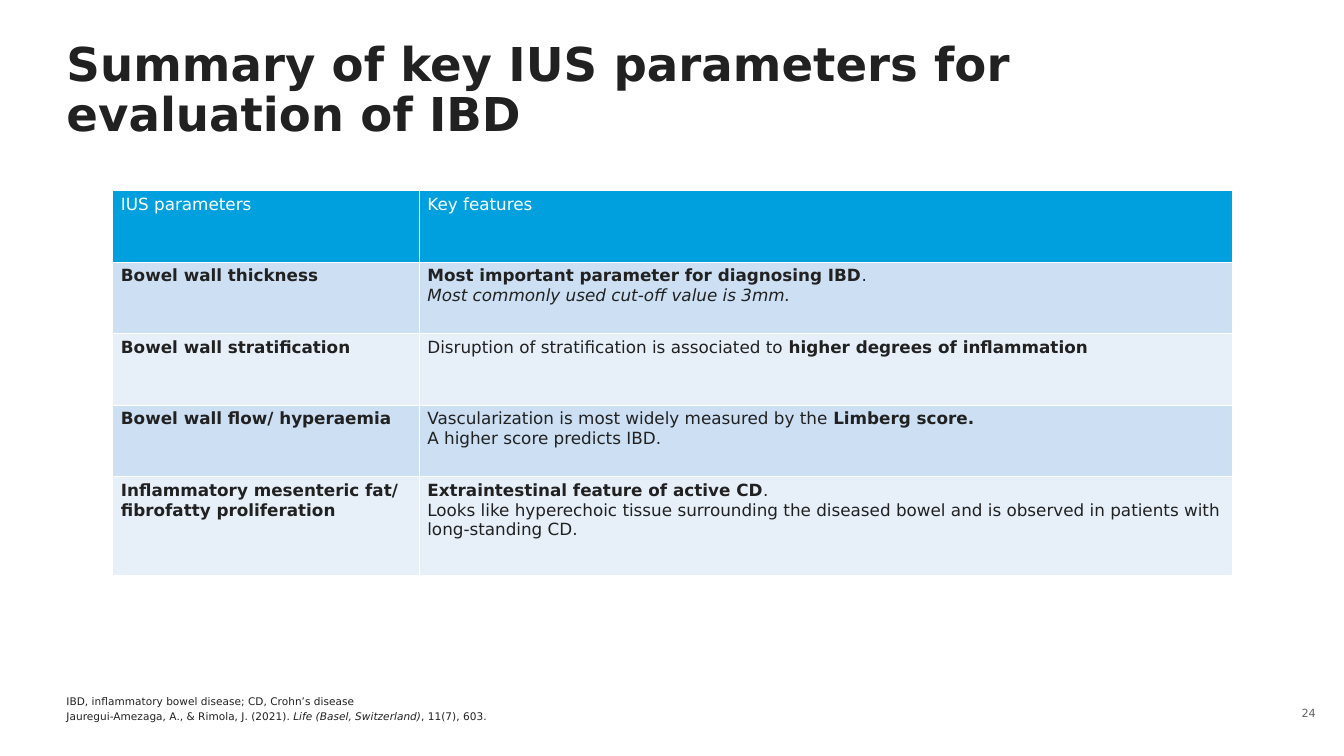
import dataclasses

import lxml.etree
import pptx
import pptx.dml.color
import pptx.enum.text
import pptx.oxml.ns
import pptx.util

ANCHOR = pptx.enum.text.MSO_ANCHOR
ALIGN = pptx.enum.text.PP_ALIGN


@dataclasses.dataclass(frozen=True)
class Theme:
    font: str = "DejaVu Sans"
    ink: str = "212121"
    grey: str = "646464"
    white: str = "FFFFFF"
    header: str = "00A0DF"
    bands: tuple = ("CCDFF3", "E7F0F9")
    title_size: float = 33.3
    table_size: float = 12
    number_size: float = 8
    note_size: float = 7.5


class SlideBuilder:
    """Places elements; all lengths are percentages of the slide's size."""

    def __init__(self, deck, theme):
        self.deck = deck
        self.theme = theme
        self.page = deck.slides.add_slide(deck.slide_layouts[6])

    def across(self, share):
        return round(self.deck.slide_width * share / 100)

    def down(self, share):
        return round(self.deck.slide_height * share / 100)

    def area(self, left, top, width, height):
        return self.across(left), self.down(top), self.across(width), self.down(height)

    def set_paras(self, frame, paras, size, color, bold=False, align=ALIGN.LEFT,
                  line=None, gap=0):
        """Each para is a list of spans; a span is text or (text, style)."""
        frame.word_wrap = True
        for index, spans in enumerate(paras):
            para = frame.add_paragraph() if index else frame.paragraphs[0]
            para.alignment = align
            if line:
                para.line_spacing = line
            if index and gap:
                para.space_before = pptx.util.Pt(gap)
            para.font.name = self.theme.font
            para.font.size = pptx.util.Pt(size)
            para.font.color.rgb = pptx.dml.color.RGBColor.from_string(color)
            para.font.bold = bold
            for part in spans:
                text, style = (part, "") if isinstance(part, str) else part
                span = para.add_run()
                span.text = text
                if style:
                    setattr(span.font, style, True)

    def text(self, area, paras, size, color, anchor=ANCHOR.TOP, **style):
        frame = self.page.shapes.add_textbox(*self.area(*area)).text_frame
        frame.margin_left = frame.margin_right = 0
        frame.margin_top = frame.margin_bottom = 0
        frame.vertical_anchor = anchor
        self.set_paras(frame, paras, size, color, **style)

    def border(self, cell, width=1):
        properties = cell._tc.get_or_add_tcPr()
        for side in ("lnL", "lnR", "lnT", "lnB"):
            edge = lxml.etree.SubElement(
                properties, pptx.oxml.ns.qn(f"a:{side}"), w=str(pptx.util.Pt(width)))
            fill = lxml.etree.SubElement(edge, pptx.oxml.ns.qn("a:solidFill"))
            lxml.etree.SubElement(fill, pptx.oxml.ns.qn("a:srgbClr"), val=self.theme.white)

    def table(self, left, top, widths, heights, rows):
        area = self.area(left, top, sum(widths), sum(heights))
        table = self.page.shapes.add_table(len(rows), len(widths), *area).table
        table.first_row = table.horz_banding = False
        for column, width in zip(table.columns, widths):
            column.width = self.across(width)
        for row, height in zip(table.rows, heights):
            row.height = self.down(height)
        for r, row in enumerate(rows):
            fill = self.theme.bands[(r - 1) % 2] if r else self.theme.header
            color = self.theme.ink if r else self.theme.white
            for c, paras in enumerate(row):
                cell = table.cell(r, c)
                cell.margin_left = cell.margin_right = pptx.util.Inches(0.08)
                cell.margin_top = cell.margin_bottom = pptx.util.Inches(0.04)
                self.border(cell)
                cell.fill.solid()
                cell.fill.fore_color.rgb = pptx.dml.color.RGBColor.from_string(fill)
                self.set_paras(cell.text_frame, paras, self.theme.table_size, color,
                               bold=r > 0 and c == 0)


PARAMETERS = [
    ([["IUS parameters"]], [["Key features"]]),
    ([["Bowel wall thickness"]],
     [[("Most important parameter for diagnosing IBD", "bold"), "."],
      [("Most commonly used cut-off value is 3mm.", "italic")]]),
    ([["Bowel wall stratification"]],
     [["Disruption of stratification is associated to ",
       ("higher degrees of inflammation", "bold")]]),
    ([["Bowel wall flow/ hyperaemia"]],
     [["Vascularization is most widely measured by the ", ("Limberg score.", "bold")],
      ["A higher score predicts IBD."]]),
    ([["Inflammatory mesenteric fat/ fibrofatty proliferation"]],
     [[("Extraintestinal feature of active CD", "bold"), "."],
      ["Looks like hyperechoic tissue surrounding the diseased bowel and is "
       "observed in patients with long-standing CD."]]),
]

NOTES = [
    ["IBD, inflammatory bowel disease; CD, Crohn’s disease"],
    ["Jauregui-Amezaga, A., & Rimola, J. (2021). ",
     ("Life (Basel, Switzerland)", "italic"), ", 11(7), 603."],
]


def main():
    deck = pptx.Presentation()
    deck.slide_width = pptx.util.Inches(13.33)
    deck.slide_height = pptx.util.Inches(7.5)
    theme = Theme()
    slide = SlideBuilder(deck, theme)

    # Title
    slide.text((4.95, 5.47, 83.27, 13.47),
               [["Summary of key IUS parameters for evaluation of IBD"]],
               theme.title_size, theme.ink, bold=True, line=0.9)

    # Parameter table
    slide.table(8.4, 25.2, (22.8, 60.5), [9.47] * 4 + [13.07], PARAMETERS)

    # Footnotes and page number
    slide.text((4.95, 91.6, 68.8, 4), NOTES, theme.note_size, theme.ink,
               anchor=ANCHOR.BOTTOM, gap=1.7)
    slide.text((95.5, 91.87, 2.4, 4.8), [["24"]], theme.number_size, theme.grey,
               anchor=ANCHOR.MIDDLE, align=ALIGN.RIGHT)

    deck.save("out.pptx")


if __name__ == "__main__":
    main()
